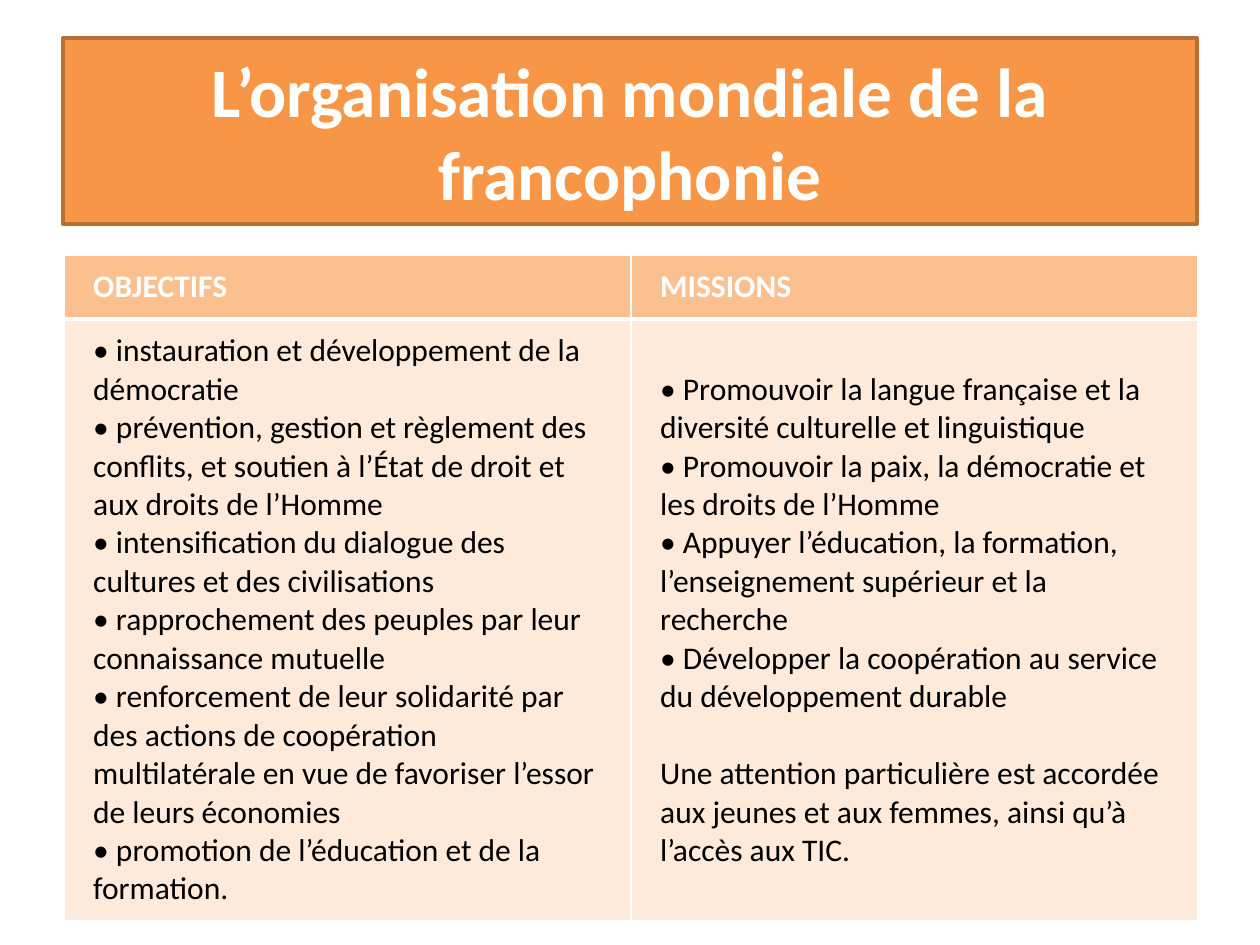
from dataclasses import dataclass

from lxml.etree import SubElement
from pptx import Presentation
from pptx.dml.color import RGBColor
from pptx.enum.shapes import MSO_SHAPE
from pptx.enum.text import MSO_ANCHOR, PP_ALIGN
from pptx.oxml.ns import qn
from pptx.util import Inches, Pt

WHITE = RGBColor(0xFF, 0xFF, 0xFF)
BLACK = RGBColor(0x00, 0x00, 0x00)
ORANGE = RGBColor(0xF7, 0x96, 0x46)
BROWN = RGBColor(0xB7, 0x6F, 0x34)
PEACH = RGBColor(0xFA, 0xC0, 0x90)
CREAM = RGBColor(0xFD, 0xEA, 0xDA)

FONT = "Calibri"
SLIDE_W, SLIDE_H = Inches(10), Inches(7.5)
CONTENT_W = int(SLIDE_W * 0.9)
BODY_SIZE = 18
ROW_HEIGHTS = (Inches(0.5), Inches(4.78))


@dataclass(frozen=True)
class Column:
    heading: str
    items: tuple[str, ...]
    closing: str = ""


COLUMNS = (
    Column("OBJECTIFS", (
        "instauration et développement de la démocratie",
        "prévention, gestion et règlement des conflits, et soutien à l’État "
        "de droit et aux droits de l’Homme",
        "intensification du dialogue des cultures et des civilisations",
        "rapprochement des peuples par leur connaissance mutuelle",
        "renforcement de leur solidarité par des actions de coopération "
        "multilatérale en vue de favoriser l’essor de leurs économies",
        "promotion de l’éducation et de la formation.",
    )),
    Column("MISSIONS", (
        "Promouvoir la langue française et la diversité culturelle et linguistique",
        "Promouvoir la paix, la démocratie et les droits de l’Homme",
        "Appuyer l’éducation, la formation, l’enseignement supérieur et la recherche",
        "Développer la coopération au service du développement durable",
    ), "Une attention particulière est accordée aux jeunes et aux femmes, "
       "ainsi qu’à l’accès aux TIC."),
)


def style_text(frame, size: float, color: RGBColor, bold: bool) -> None:
    for paragraph in frame.paragraphs:
        for run in paragraph.runs:
            run.font.name = FONT
            run.font.size = Pt(size)
            run.font.bold = bold
            run.font.color.rgb = color


def set_borders(cell, widths: dict[str, float]) -> None:
    """Draw white borders; they must come before the fill in the cell's XML."""
    properties = cell._tc.get_or_add_tcPr()
    for side, width in widths.items():
        border = SubElement(properties, qn(f"a:ln{side}"), w=str(Pt(width)))
        fill = SubElement(border, qn("a:solidFill"))
        SubElement(fill, qn("a:srgbClr"), val=str(WHITE))


def fill_cell(cell, text: str, fill: RGBColor, color: RGBColor, bold: bool,
              top: float, bottom: float) -> None:
    cell.margin_left = cell.margin_right = Inches(0.23)
    cell.margin_top = cell.margin_bottom = Inches(0.1)
    cell.vertical_anchor = MSO_ANCHOR.MIDDLE
    set_borders(cell, {"L": 1, "R": 1, "T": top, "B": bottom})
    cell.fill.solid()
    cell.fill.fore_color.rgb = fill
    cell.text_frame.text = text
    style_text(cell.text_frame, BODY_SIZE, color, bold)


def add_title(slide, text: str) -> None:
    banner = slide.shapes.add_shape(
        MSO_SHAPE.RECTANGLE, int(SLIDE_W * 0.05), int(SLIDE_H * 0.04),
        CONTENT_W, Inches(1.48))
    banner.shadow.inherit = False
    banner.fill.solid()
    banner.fill.fore_color.rgb = ORANGE
    banner.line.color.rgb = BROWN
    banner.line.width = Pt(2)
    frame = banner.text_frame
    frame.word_wrap = True
    frame.vertical_anchor = MSO_ANCHOR.MIDDLE
    frame.text = text
    frame.paragraphs[0].alignment = PP_ALIGN.CENTER
    style_text(frame, 39.6, WHITE, True)


def add_comparison(slide, columns: tuple[Column, ...]) -> None:
    table = slide.shapes.add_table(
        len(ROW_HEIGHTS), len(columns), Inches(0.51), int(SLIDE_H * 0.27),
        CONTENT_W, sum(ROW_HEIGHTS)).table
    for row, height in zip(table.rows, ROW_HEIGHTS):
        row.height = height
    for index, column in enumerate(columns):
        fill_cell(table.cell(0, index), column.heading, PEACH, WHITE, True, 1, 3)
        lines = [f"• {item}" for item in column.items]
        if column.closing:
            lines.append(column.closing)
        body = table.cell(1, index)
        fill_cell(body, "\n".join(lines), CREAM, BLACK, False, 3, 1)
        # The closing remark stands one line apart from the list
        if column.closing:
            body.text_frame.paragraphs[-1].space_before = Pt(22)


def main() -> None:
    presentation = Presentation()
    presentation.slide_width, presentation.slide_height = SLIDE_W, SLIDE_H
    slide = presentation.slides.add_slide(presentation.slide_layouts[6])
    add_title(slide, "L’organisation mondiale de la francophonie")
    add_comparison(slide, COLUMNS)
    presentation.save("out.pptx")


if __name__ == "__main__":
    main()
